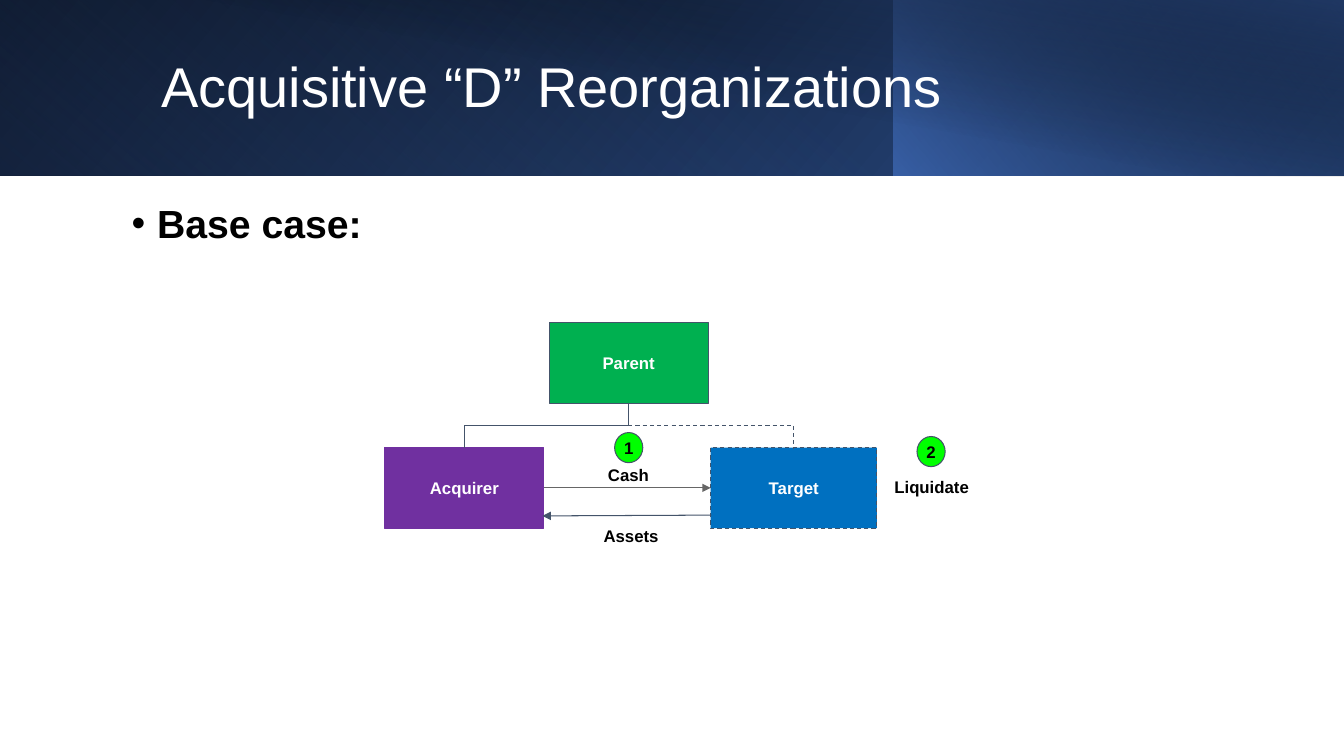
from lxml.etree import SubElement
from pptx import Presentation
from pptx.dml.color import RGBColor
from pptx.enum.dml import MSO_LINE
from pptx.enum.shapes import MSO_CONNECTOR, MSO_SHAPE
from pptx.enum.text import MSO_ANCHOR, PP_ALIGN
from pptx.oxml.ns import qn
from pptx.util import Cm, Pt

COLORS = {
    "white": "FFFFFF", "black": "000000", "navy": "203864", "blue": "4472C4",
    "deep": "2F5597", "slate": "44546A", "gray": "666666", "parent": "00B050",
    "acquirer": "7030A0", "target": "0070C0", "step": "00FF00",
}


def rgb(name):
    """Return the named colour."""
    return RGBColor.from_string(COLORS[name])


def write(shape, text, size=12, color="black", bold=True, align=PP_ALIGN.CENTER,
          anchor=MSO_ANCHOR.TOP, inset=(0.25, 0.25), spacing=None, before=0, bullet=None):
    """Write one formatted paragraph into a shape."""
    frame = shape.text_frame
    frame.word_wrap = True
    frame.vertical_anchor = anchor
    frame.margin_left = frame.margin_right = Cm(inset[0])
    frame.margin_top = frame.margin_bottom = Cm(inset[1])
    paragraph = frame.paragraphs[0]
    paragraph.alignment = align
    paragraph.space_before = Pt(before)
    if spacing:
        paragraph.line_spacing = spacing
    if bullet:
        props = paragraph._p.get_or_add_pPr()
        props.set("marL", str(Cm(0.64)))
        props.set("indent", str(-Cm(0.64)))
        SubElement(props, qn("a:buFont"), typeface="Arial")
        SubElement(props, qn("a:buChar"), char=bullet)
    run = paragraph.add_run()
    run.text = text
    run.font.name = "Arial"
    run.font.size = Pt(size)
    run.font.bold = bold
    run.font.color.rgb = rgb(color)


class Deck:
    """Hold the line style and the current slide."""

    line_width = Pt(0.75)

    def __init__(self):
        """Start a presentation with one blank slide."""
        self.file = Presentation()
        self.file.slide_width, self.file.slide_height = Cm(33.87), Cm(19.05)
        self.slide = self.file.slides.add_slide(self.file.slide_layouts[6])

    def shape(self, kind, box):
        """Add a preset shape without shadow."""
        shape = self.slide.shapes.add_shape(kind, *map(Cm, box))
        shape.shadow.inherit = False
        return shape

    def gradient(self, box, stops, angle, flip=True, rotation=0):
        """Add a rectangle with a linear gradient of (position, colour, opacity) stops."""
        panel = self.shape(MSO_SHAPE.RECTANGLE, box)
        panel.line.fill.background()
        panel.rotation = rotation
        if flip:
            panel._element.spPr.find(qn("a:xfrm")).set("flipH", "1")
        panel.fill.gradient()
        fill = panel._element.spPr.find(qn("a:gradFill"))
        fill.find(qn("a:lin")).set("ang", str(angle * 60000))
        stop_list = fill.find(qn("a:gsLst"))
        for old in list(stop_list):
            stop_list.remove(old)
        for position, color, opacity in stops:
            stop = SubElement(stop_list, qn("a:gs"), pos=str(position * 1000))
            tint = SubElement(stop, qn("a:srgbClr"), val=COLORS[color])
            SubElement(tint, qn("a:alpha"), val=str(opacity * 1000))

    def node(self, kind, box, text, fill, line="slate", dash=None, **style):
        """Add a filled, outlined shape with centred text."""
        node = self.shape(kind, box)
        node.fill.solid()
        node.fill.fore_color.rgb = rgb(fill)
        self.outline(node.line, line, dash)
        write(node, text, anchor=MSO_ANCHOR.MIDDLE, **style)
        return node

    def label(self, box, text, **style):
        """Add a text box."""
        write(self.slide.shapes.add_textbox(*map(Cm, box)), text, **style)

    def outline(self, line, color, dash=None):
        """Apply the line style."""
        line.color.rgb = rgb(color)
        line.width = self.line_width
        if dash:
            line.dash_style = dash

    def connector(self, kind, color, ends=(0, 0, 0, 0), dash=None):
        """Add a styled connector without shadow."""
        connector = self.slide.shapes.add_connector(kind, *map(Cm, ends))
        self.outline(connector.line, color, dash)
        SubElement(connector._element.spPr, qn("a:effectLst"))
        return connector

    def arrow(self, ends, color):
        """Add a straight arrow."""
        arrow = self.connector(MSO_CONNECTOR.STRAIGHT, color, ends)
        SubElement(arrow.line._get_or_add_ln(), qn("a:tailEnd"), type="triangle")
        return arrow

    def branch(self, owner, owned, dash=None):
        """Join the owner's bottom to the owned box's top with a vertical elbow."""
        elbow = self.connector(MSO_CONNECTOR.ELBOW, "slate", dash=dash)
        elbow.begin_connect(owner, 2)
        elbow.end_connect(owned, 0)
        start_x, start_y = elbow.begin_x, elbow.begin_y
        end_x, end_y = elbow.end_x, elbow.end_y
        drop, span = end_y - start_y, abs(end_x - start_x)
        elbow.left = (start_x + end_x - drop) // 2
        elbow.top = (start_y + end_y - span) // 2
        elbow.width, elbow.height = drop, span
        frame = elbow._element.spPr.find(qn("a:xfrm"))
        frame.attrib.clear()
        frame.set("rot", str((90 if end_x < start_x else 270) * 60000))
        if end_x > start_x:
            frame.set("flipH", "1")


def main():
    """Build the slide."""
    deck = Deck()
    deck.gradient((0, 0, 33.87, 4.42), [(0, "black", 100), (100, "deep", 100)], 140)
    deck.gradient((0, 0, 22.56, 4.42), [(20, "blue", 0), (100, "navy", 55)], 230, rotation=180)
    deck.gradient((22.53, 0, 11.33, 4.42), [(0, "blue", 66), (100, "black", 30)], 220)
    deck.gradient((1.27, 0, 32.6, 4.45), [(50, "black", 0), (99, "navy", 52)], 280, flip=False)

    heading = dict(align=PP_ALIGN.LEFT, inset=(0.25, 0.13))
    deck.label((3.81, 0.81, 27.74, 2.87), "Acquisitive “D” Reorganizations", size=40,
               color="white", bold=False, anchor=MSO_ANCHOR.MIDDLE, spacing=0.9, **heading)
    deck.label((3.07, 4.9, 27.74, 14.15), "Base case:", size=28, before=10, bullet="•", **heading)

    box = MSO_SHAPE.RECTANGLE
    parent = deck.node(box, (13.84, 8.13, 4.01, 2.03), "Parent", "parent", color="white")
    acquirer = deck.node(box, (9.7, 11.28, 4.01, 2.03), "Acquirer", "acquirer",
                         line="acquirer", color="white")
    target = deck.node(box, (17.91, 11.28, 4.19, 2.03), "Target", "target",
                       dash=MSO_LINE.DASH, color="white")
    deck.branch(parent, acquirer)
    deck.branch(parent, target, dash=MSO_LINE.DASH)

    cash = deck.arrow((13.71, 12.29, 17.91, 12.29), "gray")
    cash.begin_connect(acquirer, 3)
    cash.end_connect(target, 1)
    deck.arrow((17.93, 12.98, 13.67, 13), "slate")

    deck.label((21.64, 11.76, 3.68, 1.9), "Liquidate")
    deck.label((14, 11.46, 3.68, 0.76), "Cash")
    deck.label((14.38, 13, 3.05, 1.42), "Assets")
    for number, (left, top) in enumerate([(15.49, 10.9), (23.11, 11)], start=1):
        deck.node(MSO_SHAPE.OVAL, (left, top, 0.71, 0.76), str(number), "step", inset=(0, 0))

    deck.file.save("out.pptx")


if __name__ == "__main__":
    main()
